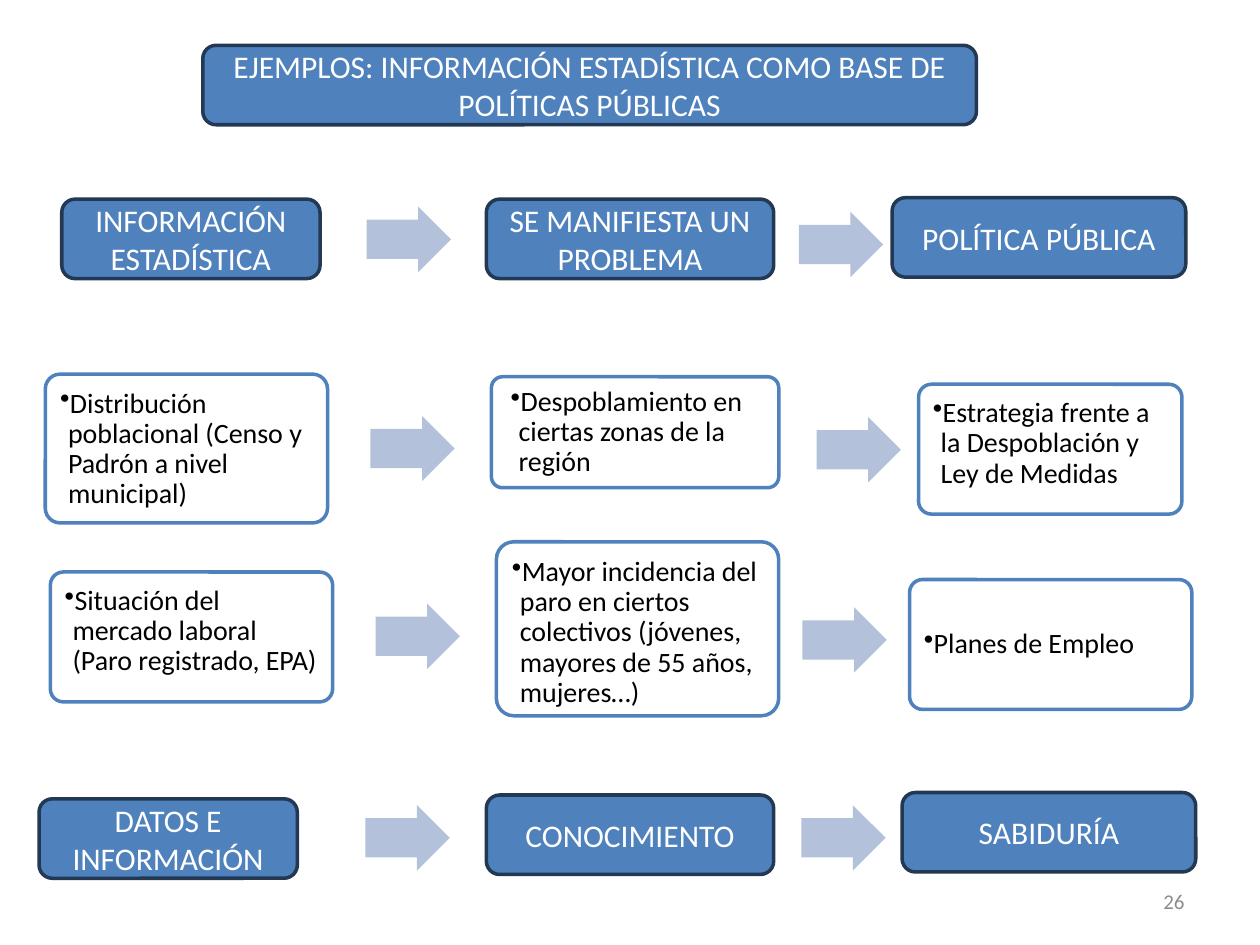
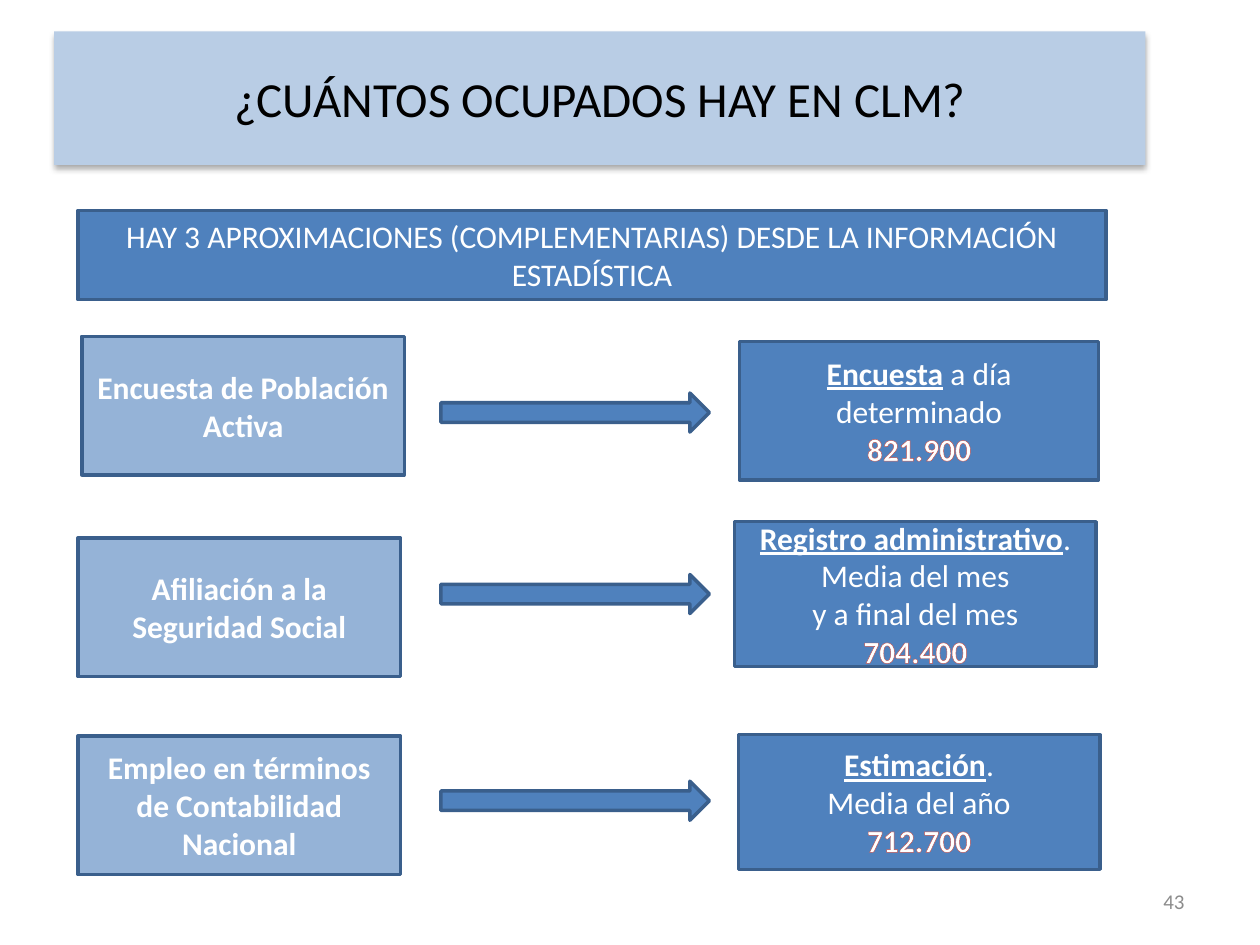
from dataclasses import dataclass

from lxml import etree
from pptx import Presentation
from pptx.dml.color import RGBColor
from pptx.enum.shapes import MSO_SHAPE
from pptx.enum.text import MSO_ANCHOR, PP_ALIGN
from pptx.oxml.ns import qn
from pptx.util import Pt

RECT = MSO_SHAPE.RECTANGLE
ROUND = MSO_SHAPE.ROUNDED_RECTANGLE
ARROW = MSO_SHAPE.RIGHT_ARROW
TOP, MIDDLE = MSO_ANCHOR.TOP, MSO_ANCHOR.MIDDLE
LEFT, CENTER, RIGHT = PP_ALIGN.LEFT, PP_ALIGN.CENTER, PP_ALIGN.RIGHT


@dataclass(frozen=True)
class Theme:
    font: str = "Calibri"
    white: str = "FFFFFF"
    black: str = "000000"
    blue: str = "4F81BD"
    navy: str = "233953"
    edge: str = "3A5F8C"
    soft: str = "95B3D7"
    pale: str = "B9CDE5"
    arrow: str = "B3C1DB"
    red: str = "C0504D"
    gray: str = "8C8C8C"
    title: int = 28
    body: int = 18
    card: int = 16
    footer: int = 12
    line: int = 2


T = Theme()


def add_xml(parent, tag, **attrs):
    return etree.SubElement(parent, qn(tag), {k: str(v) for k, v in attrs.items()})


def add_box(slide, kind, box, fill, line=None):
    sp = slide.shapes.add_shape(kind, *map(Pt, box))
    sp.shadow.inherit = False
    sp.fill.solid()
    sp.fill.fore_color.rgb = RGBColor.from_string(fill)
    if line:
        sp.line.color.rgb = RGBColor.from_string(line)
        sp.line.width = Pt(T.line)
    else:
        sp.line.fill.background()
    return sp


def add_run(p, text, size, color, bold=False, underline=False, outline=None):
    r = p.add_run()
    r.text = text
    r.font.name = T.font
    r.font.size = Pt(size)
    r.font.color.rgb = RGBColor.from_string(color)
    r.font.bold = bold
    r.font.underline = underline
    if outline:
        rpr = r.font._element
        ln = add_xml(rpr, "a:ln", w=Pt(0.52))
        add_xml(add_xml(ln, "a:solidFill"), "a:srgbClr", val=outline)
        rpr.insert(0, ln)


def write(sp, lines, size=T.body, color=T.white, align=CENTER, anchor=MIDDLE):
    tf = sp.text_frame
    tf.word_wrap = True
    tf.vertical_anchor = anchor
    for i, runs in enumerate(lines):
        p = tf.add_paragraph() if i else tf.paragraphs[0]
        p.alignment = align
        for text, style in runs:
            add_run(p, text, size, color, **style)
    return tf


def plain(text, **style):
    return [[(text, style)]]


def page_number(slide, box, number):
    sp = slide.shapes.add_textbox(*map(Pt, box))
    write(sp, plain(str(number)), T.footer, T.gray, RIGHT)


def label(slide, box, text):
    write(add_box(slide, ROUND, box, T.blue, T.navy), plain(text))


def bullet_card(slide, box, text, anchor=TOP, shift=(0, 0)):
    sp = add_box(slide, ROUND, box, T.white, T.blue)
    sp.adjustments[0] = 0.1
    color = sp._element.spPr.find(qn("a:solidFill")).find(qn("a:srgbClr"))
    add_xml(color, "a:alpha", val=90000)
    p = sp.text_frame.paragraphs[0]
    p.level = 1
    ppr = p._p.get_or_add_pPr()
    ppr.set("marL", str(Pt(4.5)))
    ppr.set("indent", str(Pt(-4.5)))
    add_xml(ppr, "a:buChar", char="•")
    p.line_spacing = 0.9
    tf = write(sp, plain(text), T.card, T.black, LEFT, anchor)
    dx, dy = shift
    tf.margin_left, tf.margin_right = Pt(6 + dx), Pt(6)
    tf.margin_top, tf.margin_bottom = Pt(6 + dy), Pt(6)


def flow_row(slide, top, draw, items, arrows):
    for (x, dy, w, h), *content in items:
        draw(slide, (x, top + dy, w, h), *content)
    for x, dy in arrows:
        sp = add_box(slide, ARROW, (x, top + dy, 48.2, 37.4), T.arrow)
        sp.adjustments[0] = 0.6


def title_band(slide, box, text):
    sp = add_box(slide, RECT, box, T.pale)
    effects = sp._element.spPr.find(qn("a:effectLst"))
    shadow = add_xml(effects, "a:outerShdw", blurRad=Pt(3.5), dist=Pt(2.2),
                     dir=5400000, rotWithShape=0)
    add_xml(add_xml(shadow, "a:srgbClr", val=T.black), "a:alpha", val=32000)
    write(sp, plain(text), T.title, T.black)


def source_row(slide, top, source, arrow, result, name, lines):
    for (x, dy, w, h), fill, text in (
        (source, T.soft, plain(name, bold=True)),
        (result, T.blue, lines),
    ):
        write(add_box(slide, RECT, (x, top + dy, w, h), fill, T.edge), text)
    x, dy = arrow
    add_box(slide, ARROW, (x, top + dy, 153.4, 22.3), T.blue, T.edge)


def finding(method, rest, details, figure):
    head = [(method, {"bold": True, "underline": True}), (rest, {})]
    total = [(figure, {"bold": True, "outline": T.red})]
    return [head, *([(d, {})] for d in details), total]


def policy_slide(slide, box, number):
    x, y, w, h = box
    label(slide, (x + 115.9, y + 25.9, 442.1, 45.4),
          "EJEMPLOS: INFORMACIÓN ESTADÍSTICA COMO BASE DE POLÍTICAS PÚBLICAS")
    flow_row(slide, y + 113, label, [
        ((35.3, 0.8, 147.6, 45.4), "INFORMACIÓN ESTADÍSTICA"),
        ((277.9, 0.8, 164.2, 45.4), "SE MANIFIESTA UN PROBLEMA"),
        ((509.8, 0, 167.8, 45.4), "POLÍTICA PÚBLICA"),
    ], [(209.5, 5.1), (456.5, 8)])
    flow_row(slide, y + 213.8, bullet_card, [
        ((25.9, 0, 161.3, 85),
         "Distribución poblacional (Censo y Padrón a nivel municipal)"),
        ((280.8, 1.5, 164.2, 63.4),
         "Despoblamiento en ciertas zonas de la región", TOP, (3.2, -1.9)),
        ((524.9, 5.8, 150.5, 74.2),
         "Estrategia frente a la Despoblación y Ley de Medidas"),
    ], [(211.7, 23.8), (466.6, 24.5)])
    flow_row(slide, y + 309.6, bullet_card, [
        ((28.8, 17.3, 161.3, 74.2),
         "Situación del mercado laboral (Paro registrado, EPA)"),
        ((283.7, 0, 161.3, 99.4),
         "Mayor incidencia del paro en ciertos colectivos "
         "(jóvenes, mayores de 55 años, mujeres…)"),
        ((519.8, 21.6, 161.3, 74.2), "Planes de Empleo", MIDDLE),
    ], [(214.6, 35.3), (458.6, 37.4)])
    flow_row(slide, y + 452.9, label, [
        ((22.3, 3.6, 147.6, 45.4), "DATOS E INFORMACIÓN"),
        ((277.9, 1.4, 164.2, 45.4), "CONOCIMIENTO"),
        ((515.5, 0, 167.8, 45.4), "SABIDURÍA"),
    ], [(208.8, 7.2), (457.9, 7.2)])
    page_number(slide, (x + w - 203.8, y + h - 39.6, 167.8, 28.8), number)


def employment_slide(slide, box, number):
    x, y, w, h = box
    title_band(slide, (x + 31, y + 18, 623.5, 76.3), "¿CUÁNTOS OCUPADOS HAY EN CLM?")
    banner = add_box(slide, RECT, (x + 44.6, y + 120.2, 587.5, 51.1), T.blue, T.edge)
    write(banner, plain("HAY 3 APROXIMACIONES (COMPLEMENTARIAS) DESDE LA "
                        "INFORMACIÓN ESTADÍSTICA"))
    source_row(slide, y + 192.2, (46.8, 0, 184.3, 79.2), (252, 32.4),
               (422.6, 2.9, 205.2, 79.2), "Encuesta de Población Activa",
               finding("Encuesta", " a día determinado", [], "821.900"))
    source_row(slide, y + 298.1, (44.6, 9.3, 184.3, 79.2), (252, 30.2),
               (419.8, 0, 206.6, 82.8), "Afiliación a la Seguridad Social",
               finding("Registro administrativo", ".",
                       ["Media del mes", "y a final del mes"], "704.400"))
    source_row(slide, y + 419.8, (44.6, 0.7, 184.3, 79.2), (252, 26.6),
               (421.9, 0, 206.6, 77), "Empleo en términos de Contabilidad Nacional",
               finding("Estimación", ".", ["Media del año"], "712.700"))
    page_number(slide, (x + w - 203.8, y + h - 39.6, 167.8, 28.8), number)


def main():
    prs = Presentation()
    prs.slide_width, prs.slide_height = Pt(720), Pt(540)
    for build, number in ((policy_slide, 26), (employment_slide, 43)):
        slide = prs.slides.add_slide(prs.slide_layouts[6])
        build(slide, (0, 0, 720, 540), number)
    prs.save("out.pptx")


if __name__ == "__main__":
    main()
